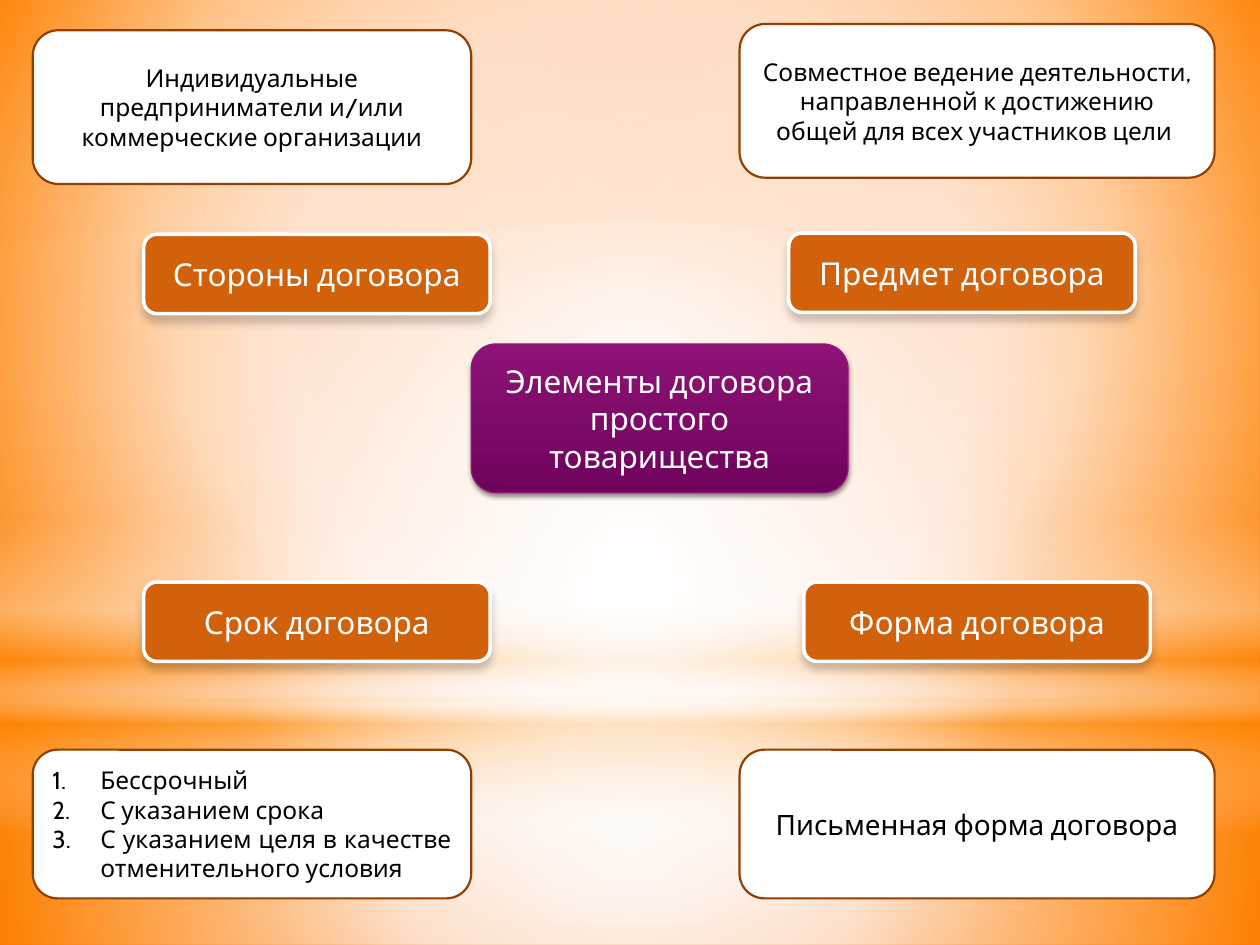
from pptx import Presentation
from pptx.dml.color import RGBColor
from pptx.enum import shapes, text
from pptx.oxml import parse_xml
from pptx.oxml.ns import nsdecls, qn
from pptx.util import Inches, Pt

FONT = "Cabin"
WHITE, BLACK, ORANGE, BROWN = "FFFFFF", "000000", "D2610C", "933F00"
PURPLE_LINE = "94147C"
GLOW = "FF8600"
CENTRE = (50, 50, 50, 50)
SOFT_SHADOW = (20, 5, 4)
FIRM_SHADOW = (45, 3.1, 1.8)


def colour(hex_code):
    return RGBColor.from_string(hex_code)


def colour_xml(hex_code, opacity=100):
    return f'<a:srgbClr val="{hex_code}"><a:alpha val="{opacity * 1000}"/></a:srgbClr>'


def set_gradient(fill, parent, stops, focus=None):
    """Fill with (position, colour, opacity) stops: round a focus, or top to bottom."""
    stop_xml = "".join(f'<a:gs pos="{pos * 1000}">{colour_xml(*tint)}</a:gs>'
                       for pos, *tint in stops)
    if focus:
        sides = " ".join(f'{side}="{value * 1000}"' for side, value in zip("ltrb", focus))
        course = f'<a:path path="circle"><a:fillToRect {sides}/></a:path>'
    else:
        course = '<a:lin ang="5400000" scaled="0"/>'
    fill.solid()
    solid = parent.find(qn("a:solidFill"))
    parent.replace(solid, parse_xml(
        f'<a:gradFill {nsdecls("a")} rotWithShape="1"><a:gsLst>{stop_xml}</a:gsLst>'
        f'{course}</a:gradFill>'))


def add_shadow(shape, opacity, blur, distance):
    shape._element.spPr.find(qn("a:effectLst")).append(parse_xml(
        f'<a:outerShdw {nsdecls("a")} blurRad="{Pt(blur)}" dist="{Pt(distance)}" '
        f'dir="5400000" algn="ctr" rotWithShape="0">{colour_xml(BLACK, opacity)}</a:outerShdw>'))


def add_plain(slide, kind, box):
    shape = slide.shapes.add_shape(kind, *(Inches(length) for length in box))
    shape.shadow.inherit = False
    return shape


def add_backdrop(slide, width, height):
    background = slide.background.fill
    background.solid()
    set_gradient(background, slide._element.find(".//" + qn("p:bgPr")),
                 [(0, "FF8221"), (60, "FFCAA7"), (100, "F86900")], (20, 10, 20, 60))
    rectangle, ellipse = shapes.MSO_SHAPE.RECTANGLE, shapes.MSO_SHAPE.OVAL
    horizon = 5.58
    layers = [
        (rectangle, horizon, height - horizon,
         [(0, WHITE, 91), (37, WHITE, 76), (100, GLOW, 79)], CENTRE),
        (rectangle, 0, horizon,
         [(0, WHITE, 89), (48, WHITE, 62), (100, GLOW, 79)], CENTRE),
        (rectangle, 4.12, 2.5,
         [(0, WHITE, 0), (29, WHITE, 30), (45, GLOW, 40), (55, WHITE, 26),
          (65, GLOW, 60), (100, WHITE, 0)], None),
        (ellipse, 1.75, horizon, [(0, WHITE), (56, WHITE, 0)], CENTRE),
    ]
    for kind, top, depth, stops, focus in layers:
        layer = add_plain(slide, kind, (0, top, width, depth))
        set_gradient(layer.fill, layer._element.spPr, stops, focus)
        layer.line.fill.background()


def add_card(slide, box, wording, size, ink, fill, line, line_width):
    card = add_plain(slide, shapes.MSO_SHAPE.ROUNDED_RECTANGLE, box)
    card.fill.solid()
    card.fill.fore_color.rgb = colour(fill)
    card.line.color.rgb = colour(line)
    card.line.width = Pt(line_width)
    frame = card.text_frame
    frame.word_wrap = True
    frame.vertical_anchor = text.MSO_ANCHOR.MIDDLE
    frame.text = wording
    for paragraph in frame.paragraphs:
        paragraph.alignment = text.PP_ALIGN.CENTER
        for run in paragraph.runs:
            run.font.name = FONT
            run.font.size = Pt(size)
            run.font.color.rgb = colour(ink)
    return card


def add_topic(slide, box, wording):
    topic = add_card(slide, box, wording, 18, WHITE, ORANGE, WHITE, 2)
    add_shadow(topic, *SOFT_SHADOW)


def add_core(slide, box, wording):
    core = add_card(slide, box, wording, 18, WHITE, PURPLE_LINE, PURPLE_LINE, 0.75)
    set_gradient(core.fill, core._element.spPr, [(0, "8D1376"), (100, "6F035B")])
    add_shadow(core, *FIRM_SHADOW)


def add_detail(slide, box, wording, size=14):
    return add_card(slide, box, wording, size, BLACK, WHITE, BROWN, 1.25)


def number_lines(card):
    indent = Inches(0.38)
    for paragraph in card.text_frame.paragraphs:
        paragraph.alignment = text.PP_ALIGN.JUSTIFY
        properties = paragraph._p.get_or_add_pPr()
        properties.set("marL", str(indent))
        properties.set("indent", str(-indent))
        properties.append(parse_xml(f'<a:buFont {nsdecls("a")} typeface="+mj-lt"/>'))
        properties.append(parse_xml(f'<a:buAutoNum {nsdecls("a")} type="arabicPeriod"/>'))


def main():
    width, height = 10, 7.5
    deck = Presentation()
    deck.slide_width, deck.slide_height = Inches(width), Inches(height)
    slide = deck.slides.add_slide(deck.slide_layouts[6])
    add_backdrop(slide, width, height)

    add_core(slide, (3.74, 2.73, 2.99, 1.18), "Элементы договора простого товарищества")
    for left, top, topic in [
        (1.14, 1.86, "Стороны договора"),
        (6.26, 1.85, "Предмет договора"),
        (1.14, 4.62, "Срок договора"),
        (6.38, 4.62, "Форма договора"),
    ]:
        add_topic(slide, (left, top, 2.75, 0.63), topic)

    left_column, right_column = (0.26, 3.48), (5.87, 3.77)

    def detail_box(column, top, depth):
        left, breadth = column
        return left, top, breadth, depth

    add_detail(slide, detail_box(left_column, 0.24, 1.22),
               "Индивидуальные предприниматели и/или коммерческие организации")
    add_detail(slide, detail_box(right_column, 0.19, 1.22),
               "Совместное ведение деятельности, направленной к достижению "
               "общей для всех участников цели ")
    terms = add_detail(slide, detail_box(left_column, 5.95, 1.18),
                       "Бессрочный\nС указанием срока\n"
                       "С указанием целя в качестве отменительного условия")
    number_lines(terms)
    add_detail(slide, detail_box(right_column, 5.95, 1.18), "Письменная форма договора", 16)

    deck.save("out.pptx")


if __name__ == "__main__":
    main()
